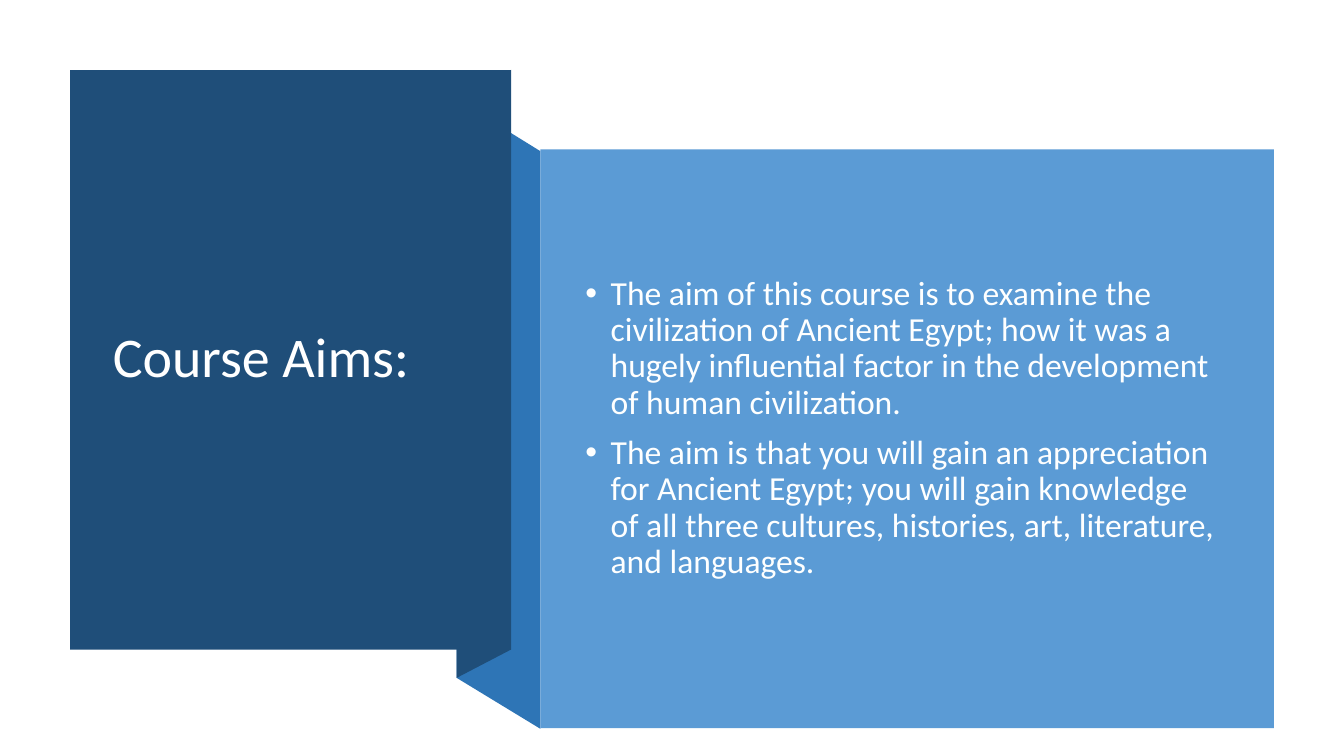
from lxml import etree
from pptx import Presentation
from pptx.dml.color import RGBColor
from pptx.enum import shapes, text
from pptx.oxml import ns
from pptx.util import Pt

# Content
TITLE = "Course Aims:"
AIMS = [
    "The aim of this course is to examine the civilization of Ancient Egypt; "
    "how it was a hugely influential factor in the development of human civilization.",
    "The aim is that you will gain an appreciation for Ancient Egypt; you will gain "
    "knowledge of all three cultures, histories, art, literature, and languages.",
]

# Colours
NAVY = RGBColor(0x1F, 0x4E, 0x79)
BLUE = RGBColor(0x2E, 0x75, 0xB6)
SKY = RGBColor(0x5B, 0x9B, 0xD5)
WHITE = RGBColor(0xFF, 0xFF, 0xFF)
OFF_WHITE = RGBColor(0xFE, 0xFF, 0xFF)

# Geometry in points: left, top, width, height
TITLE_PANEL = (50, 50, 315, 414)
AIMS_PANEL = (386, 106.7, 524, 413.5)
TITLE_BOX = (73.4, 77, 267, 359.3)
AIMS_BOX = (411.1, 135.4, 468.7, 341.3)
FOLD_LEFT = 326.2
FOLD_TOP = 71
FOLD_BOTTOM = 484.2
AIMS_FOLD_TOP = 108
AIMS_FOLD_BOTTOM = 520.6
INDENT = 18

TITLE_FONT = {"name": "Calibri", "size": Pt(40)}
AIM_FONT = {"name": "Calibri", "size": Pt(24)}


def points(values):
    return [Pt(value) for value in values]


def paint(shape, colour):
    shape.shadow.inherit = False
    shape.fill.solid()
    shape.fill.fore_color.rgb = colour
    shape.line.fill.background()


def add_panel(page, box, colour):
    panel = page.shapes.add_shape(shapes.MSO_SHAPE.RECTANGLE, *points(box))
    paint(panel, colour)


def add_fold(page, right, top, bottom, colour):
    """Draw a slanted strip from the fold's left edge to a panel edge."""
    corners = [(right, bottom), (FOLD_LEFT, FOLD_BOTTOM), (FOLD_LEFT, FOLD_TOP), (right, top)]
    start, *rest = [points(corner) for corner in corners]
    builder = page.shapes.build_freeform(*start, scale=1.0)
    builder.add_line_segments(rest, close=True)
    paint(builder.convert_to_shape(), colour)


def format_frame(frame):
    frame.word_wrap = True
    frame.auto_size = text.MSO_AUTO_SIZE.NONE
    frame.vertical_anchor = text.MSO_ANCHOR.MIDDLE


def format_para(para, font_values, colour):
    para.alignment = text.PP_ALIGN.LEFT
    para.line_spacing = 0.9
    for name, value in font_values.items():
        setattr(para.font, name, value)
    para.font.color.rgb = colour


def add_bullet(para):
    props = para._p.get_or_add_pPr()
    props.set("marL", str(Pt(INDENT)))
    props.set("indent", str(-Pt(INDENT)))
    etree.SubElement(props, ns.qn("a:buFont")).set("typeface", "Arial")
    etree.SubElement(props, ns.qn("a:buChar")).set("char", "•")


def main():
    deck = Presentation()
    deck.slide_width, deck.slide_height = Pt(960), Pt(540)
    page = deck.slides.add_slide(deck.slide_layouts[5])

    # Folded ribbon and title panel
    left, top, width, height = TITLE_PANEL
    add_fold(page, AIMS_PANEL[0], AIMS_FOLD_TOP, AIMS_FOLD_BOTTOM, BLUE)
    add_fold(page, left + width, top, top + height, NAVY)
    add_panel(page, TITLE_PANEL, NAVY)

    # Title, brought in front of its panel
    title = page.shapes.title
    title.left, title.top, title.width, title.height = points(TITLE_BOX)
    title.text_frame.text = TITLE
    format_frame(title.text_frame)
    format_para(title.text_frame.paragraphs[0], TITLE_FONT, WHITE)
    title.element.getparent().append(title.element)

    # Aims panel and bulleted list
    add_panel(page, AIMS_PANEL, SKY)
    frame = page.shapes.add_textbox(*points(AIMS_BOX)).text_frame
    format_frame(frame)
    for index, aim in enumerate(AIMS):
        para = frame.add_paragraph() if index else frame.paragraphs[0]
        para.text = aim
        add_bullet(para)
        format_para(para, AIM_FONT, OFF_WHITE)
        para.space_before = Pt(10 if index else 0)

    deck.save("out.pptx")


if __name__ == "__main__":
    main()
